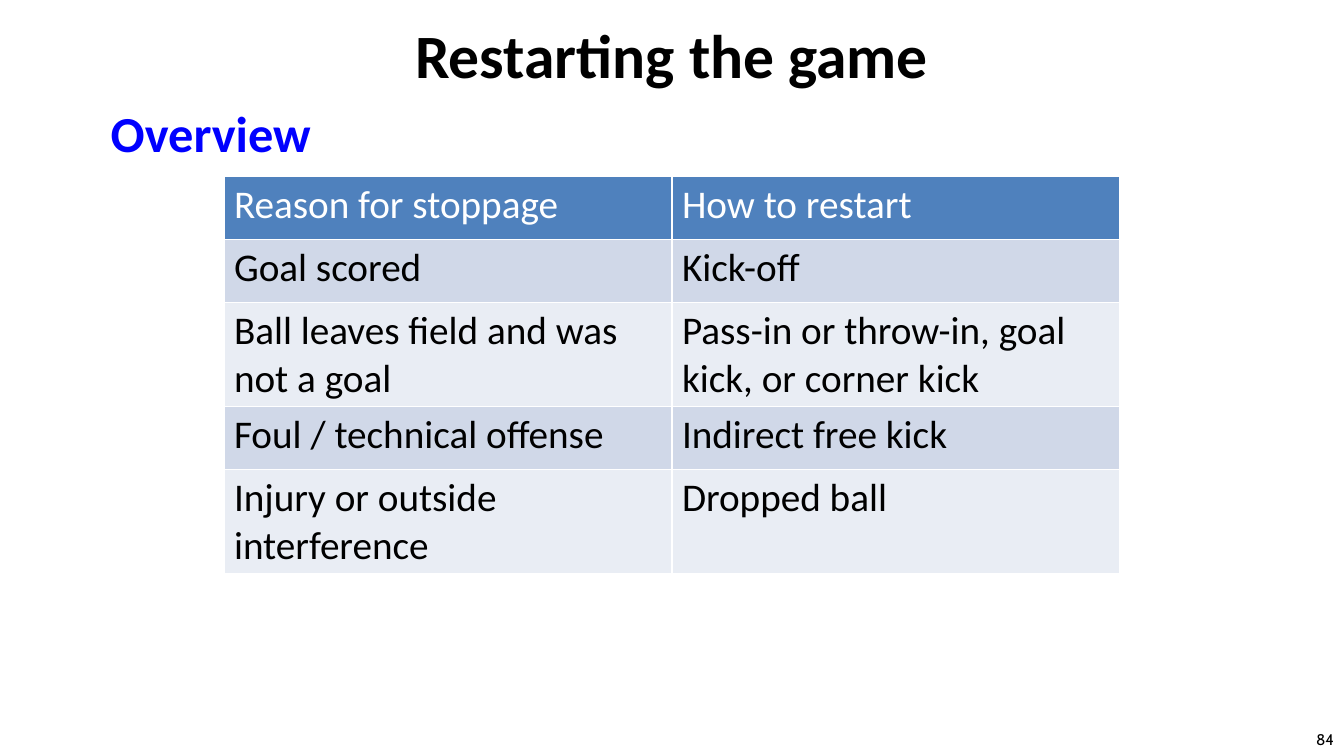
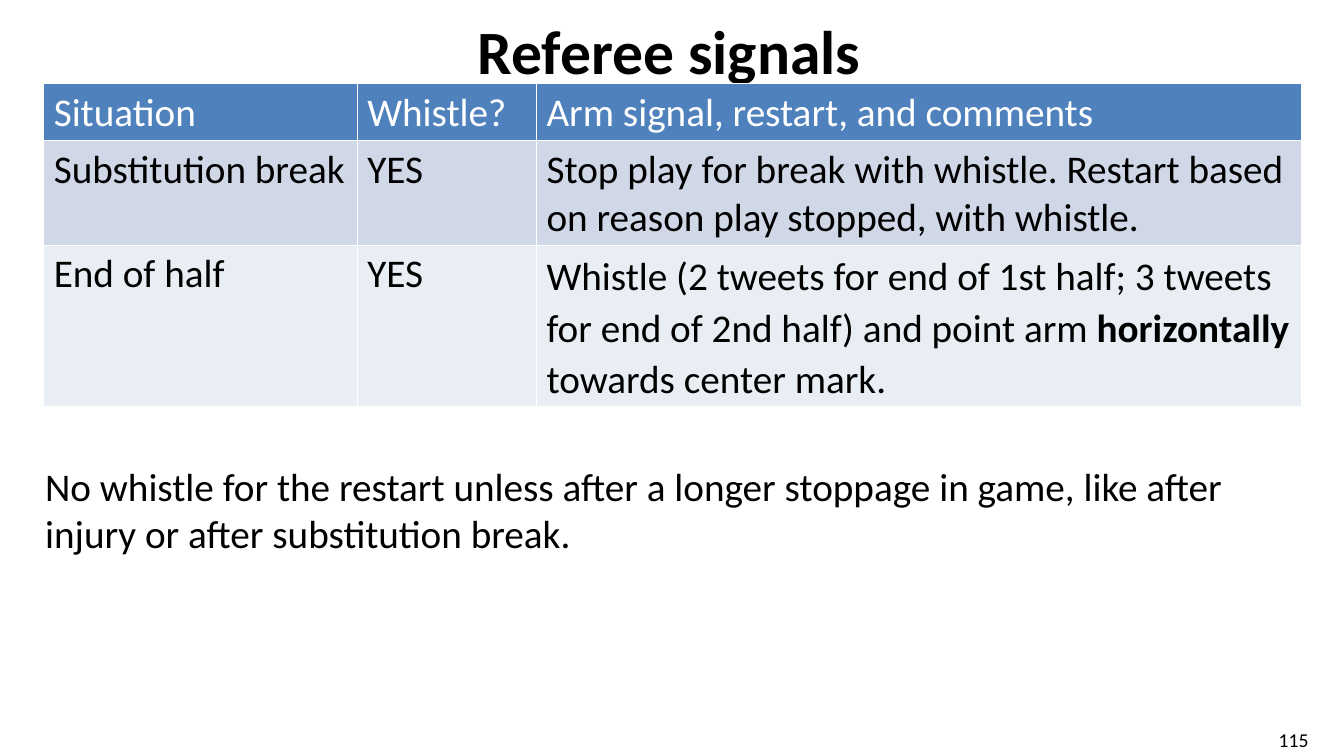
from lxml.etree import SubElement
from pptx import Presentation
from pptx.dml.color import RGBColor
from pptx.enum.text import MSO_ANCHOR, PP_ALIGN
from pptx.oxml.ns import qn
from pptx.util import Inches, Pt

BLACK, WHITE, BLUE = "000000", "FFFFFF", "0000FF"
HEADER, BANDS = "4F81BD", ("D0D8E8", "E9EDF4")
FONT, NUMBER_FONT = "Calibri", "Cabin"
TITLE_SIZE, HEADING_SIZE, BODY_SIZE = 44, 36, 28
COLUMNS, ROWS = 120, 60


def colour(code):
    return RGBColor.from_string(code)


class Deck:
    """Holds the shared style and the current page, placed on a 120 by 60 grid."""

    def __init__(self):
        self.deck = Presentation()
        self.deck.slide_width = Inches(13.333)
        self.deck.slide_height = Inches(7.5)
        self.page = None

    def across(self, columns):
        return round(self.deck.slide_width * columns / COLUMNS)

    def down(self, rows):
        return round(self.deck.slide_height * rows / ROWS)

    def add_page(self):
        self.page = self.deck.slides.add_slide(self.deck.slide_layouts[6])

    def style(self, span, size, code=BLACK, bold=False, font=FONT):
        span.font.name = font
        span.font.size = Pt(size)
        span.font.bold = bold
        span.font.color.rgb = colour(code)

    def text(self, words, left, top, width, height, size=BODY_SIZE, code=BLACK,
             bold=False, font=FONT, align=PP_ALIGN.LEFT, anchor=MSO_ANCHOR.TOP):
        box = self.page.shapes.add_textbox(
            self.across(left), self.down(top), self.across(width), self.down(height))
        frame = box.text_frame
        frame.word_wrap = True
        frame.vertical_anchor = anchor
        frame.text = words
        para = frame.paragraphs[0]
        para.alignment = align
        self.style(para.runs[0], size, code, bold, font)

    def title(self, words, left, top, width, height):
        self.text(words, left, top, width, height, TITLE_SIZE, bold=True,
                  align=PP_ALIGN.CENTER)

    def number(self, words, size, font, align):
        self.text(words, 111, 57.36, 9, 2.64, size, font=font, align=align,
                  anchor=MSO_ANCHOR.MIDDLE)

    def borders(self, cell):
        properties = cell._tc.get_or_add_tcPr()
        for side in ("lnL", "lnR", "lnT", "lnB"):
            line = SubElement(properties, qn(f"a:{side}"), w=str(Pt(1)))
            fill = SubElement(line, qn("a:solidFill"))
            SubElement(fill, qn("a:srgbClr"), val=WHITE)

    def cell(self, cell, content, code, fill):
        self.borders(cell)
        cell.fill.solid()
        cell.fill.fore_color.rgb = colour(fill)
        para = cell.text_frame.paragraphs[0]
        pieces = [(content, False)] if isinstance(content, str) else content
        for words, bold in pieces:
            span = para.add_run()
            span.text = words
            self.style(span, BODY_SIZE, code, bold)

    def table(self, content, left, top, widths, row_height):
        frame = self.page.shapes.add_table(
            len(content), len(widths), self.across(left), self.down(top),
            self.across(sum(widths)), self.down(row_height * len(content)))
        table = frame.table
        for column, width in zip(table.columns, widths):
            column.width = self.across(width)
        for index, entries in enumerate(content):
            table.rows[index].height = self.down(row_height)
            code, fill = (BLACK, BANDS[(index - 1) % 2]) if index else (WHITE, HEADER)
            for cell, entry in zip(table.rows[index].cells, entries):
                self.cell(cell, entry, code, fill)
        return table

    def save(self):
        self.deck.save("out.pptx")


def restarting(deck):
    deck.add_page()
    deck.text("Overview", 9, 7.68, 104.2, 5.68, HEADING_SIZE, BLUE, True)
    deck.number("84", 11, NUMBER_FONT, PP_ALIGN.RIGHT)
    deck.table([
        ("Reason for stoppage", "How to restart"),
        ("Goal scored", "Kick-off"),
        ("Ball leaves field and was not a goal",
         "Pass-in or throw-in, goal kick, or corner kick"),
        ("Foul / technical offense", "Indirect free kick"),
        ("Injury or outside interference", "Dropped ball"),
    ], 20, 14, (40, 40), 5)
    deck.title("Restarting the game", 6.2, 0.96, 107.6, 6.72)


def signals(deck):
    deck.add_page()
    deck.title("Referee signals", 23.4, 0.64, 72.7, 6)
    deck.number("115", 14, FONT, PP_ALIGN.CENTER)
    table = deck.table([
        ("Situation", "Whistle?", "Arm signal, restart, and comments"),
        ("Substitution break", "YES",
         "Stop play for break with whistle. Restart based on reason play stopped, "
         "with whistle."),
        ("End of half", "YES",
         [("Whistle (2 tweets for end of 1st half; 3 tweets for end of 2nd half) "
           "and point arm ", False),
          ("horizontally", True),
          (" towards center mark.", False)]),
    ], 3.9, 6.64, (28, 16, 68.3), 3.36)
    para = table.cell(2, 2).text_frame.paragraphs[0]
    para.line_spacing = 1.07
    para.space_after = Pt(8)
    deck.text("No whistle for the restart unless after a longer stoppage in game, "
              "like after injury or after substitution break.",
              3.15, 36.32, 112.4, 10.8)


def main():
    deck = Deck()
    restarting(deck)
    signals(deck)
    deck.save()


if __name__ == "__main__":
    main()
